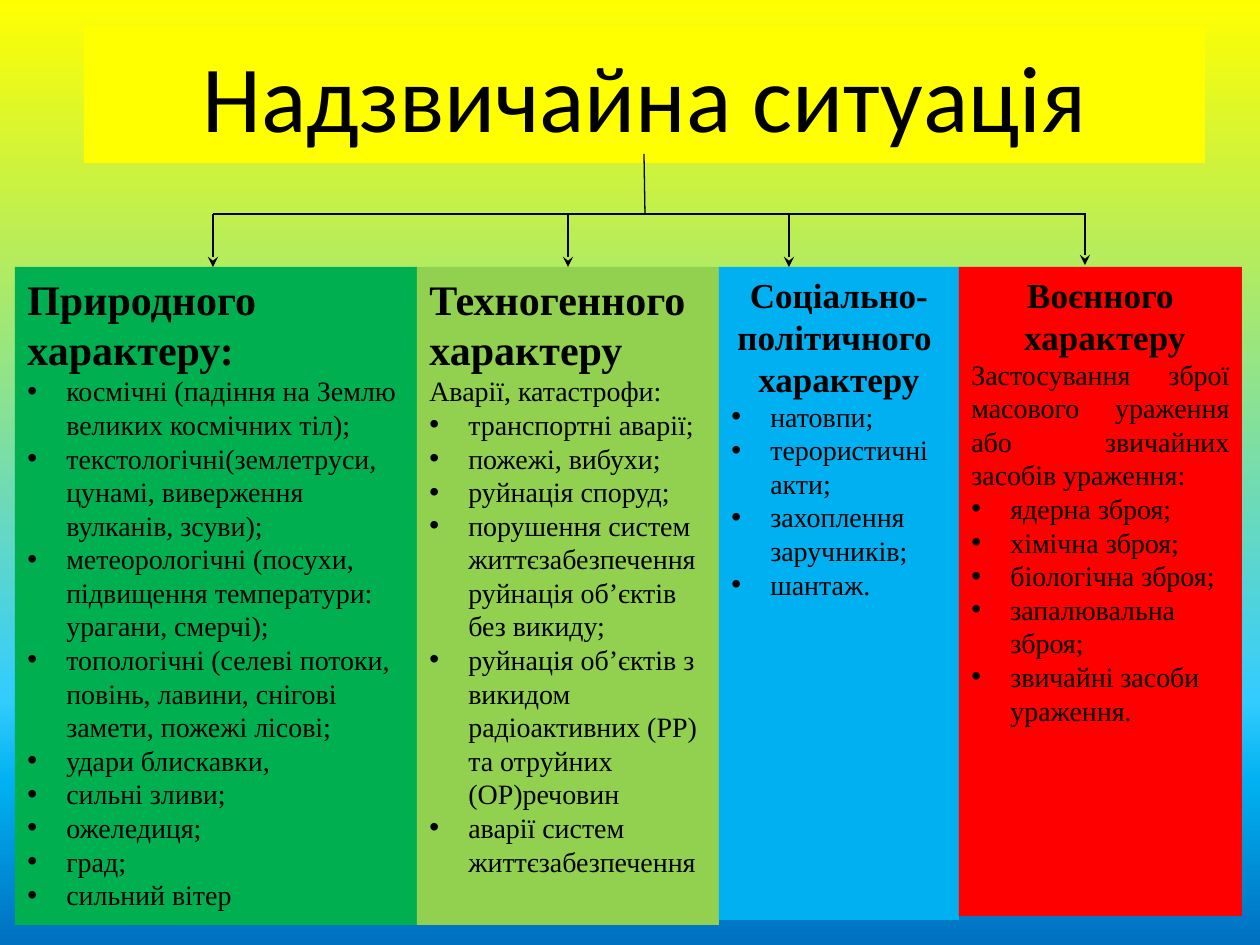
from lxml import etree
from pptx import Presentation, util as u
from pptx.dml.color import RGBColor
from pptx.enum import shapes, text
from pptx.oxml.ns import qn

PX = 914400 / 126
BLACK = "000000"
INDENT = 39
LEFT, CENTER, JUSTIFY = text.PP_ALIGN.LEFT, text.PP_ALIGN.CENTER, text.PP_ALIGN.JUSTIFY


def px(value):
    return u.Emu(round(value * PX))


def write(frame, content, size=16, bold=False, align=LEFT, bullet=False, font="Times New Roman"):
    """Fill the empty first paragraph of the frame, or add one after it."""
    paragraph = frame.paragraphs[0]
    if paragraph.runs:
        paragraph = frame.add_paragraph()
    paragraph.alignment = align
    if bullet:
        properties = paragraph._p.get_or_add_pPr()
        properties.set("marL", str(px(INDENT)))
        properties.set("indent", str(-px(INDENT)))
        etree.SubElement(properties, qn("a:buFont"), typeface="Arial")
        etree.SubElement(properties, qn("a:buChar"), char="•")
    run = paragraph.add_run()
    run.text = content
    run.font.name = font
    run.font.size = u.Pt(size)
    run.font.bold = bold
    run.font.color.rgb = RGBColor.from_string(BLACK)


presentation = Presentation()
presentation.slide_width, presentation.slide_height = px(1260), px(945)
slide = presentation.slides.add_slide(presentation.slide_layouts[6])

# Background gradient, running from top to bottom
background = slide.background.fill
background.gradient()
background.gradient_angle = 270
stops = next(slide._element.iter(qn("a:gsLst")))
for stop in list(stops):
    stops.remove(stop)
for percent, color in [(0, "FFFF00"), (74, "33CCFF"), (83, "00B0F0"), (100, "0070C0")]:
    stop = etree.SubElement(stops, qn("a:gs"), pos=str(percent * 1000))
    etree.SubElement(stop, qn("a:srgbClr"), val=color)

# Title and columns: left, top, width, height, fill, anchor, paragraphs
heading = {"size": 24, "bold": True}
small_heading = {"size": 20, "bold": True, "align": CENTER}
item = {"bullet": True}
TOP = 267
boxes = [
    (84, 26, 1121, 137, "FFFF00", text.MSO_ANCHOR.MIDDLE, [
        (["Надзвичайна ситуація"], {"size": 54, "align": CENTER, "font": "Calibri"}),
    ]),
    (15, TOP, 402, 658, "00B050", text.MSO_ANCHOR.TOP, [
        (["Природного", "характеру:"], heading),
        (["космічні (падіння на Землю великих космічних тіл);",
          "текстологічні(землетруси, цунамі, виверження вулканів, зсуви);",
          "метеорологічні (посухи, підвищення температури: урагани, смерчі);",
          "топологічні (селеві потоки, повінь, лавини, снігові замети, пожежі лісові;",
          "удари блискавки,", "сильні зливи;", "ожеледиця;", "град;", "сильний вітер"], item),
    ]),
    (417, TOP, 302, 658, "92D050", text.MSO_ANCHOR.TOP, [
        (["Техногенного", "характеру"], heading),
        (["Аварії, катастрофи:"], {}),
        (["транспортні аварії;", "пожежі, вибухи;", "руйнація споруд;",
          "порушення систем життєзабезпеченняруйнація обʼєктів без викиду;",
          "руйнація обʼєктів з викидом радіоактивних (РР) та отруйних (ОР)речовин",
          "аварії систем життєзабезпечення"], item),
    ]),
    (719, TOP, 240, 653, "00B0F0", text.MSO_ANCHOR.TOP, [
        (["Соціально-", "політичного ", "характеру"], small_heading),
        (["натовпи;", "терористичні акти;", "захоплення заручників;", "шантаж."], item),
    ]),
    (959, TOP, 283, 649, "FF0000", text.MSO_ANCHOR.TOP, [
        (["Воєнного", " характеру"], small_heading),
        (["Застосування зброї масового ураження або звичайних засобів ураження:"],
         {"align": JUSTIFY}),
        (["ядерна зброя;", "хімічна зброя;", "біологічна зброя;", "запалювальна зброя;",
          "звичайні засоби ураження."], item),
    ]),
]
for left, top, width, height, color, anchor, groups in boxes:
    shape = slide.shapes.add_shape(
        shapes.MSO_SHAPE.RECTANGLE, px(left), px(top), px(width), px(height))
    shape.shadow.inherit = False
    shape.fill.solid()
    shape.fill.fore_color.rgb = RGBColor.from_string(color)
    shape.line.fill.background()
    frame = shape.text_frame
    frame.word_wrap = True
    frame.vertical_anchor = anchor
    for lines, style in groups:
        for line in lines:
            write(frame, line, **style)

# Tree lines: start, end, arrowhead
BAR = 214
tree = [
    (213, BAR, 1086, BAR, False),
    (644, 154, 645, BAR, False),
    (213, BAR, 213, TOP, True),
    (568, BAR + 1, 568, TOP, True),
    (789, BAR, 789, TOP, True),
    (1085, BAR, 1085, TOP - 2, True),
]
for x1, y1, x2, y2, arrow in tree:
    connector = slide.shapes.add_connector(
        shapes.MSO_CONNECTOR.STRAIGHT, px(x1), px(y1), px(x2), px(y2))
    connector.line.color.rgb = RGBColor.from_string(BLACK)
    connector.line.width = u.Pt(0.75)
    if arrow:
        etree.SubElement(connector.line._get_or_add_ln(), qn("a:tailEnd"), type="stealth")
    etree.SubElement(connector._element.spPr, qn("a:effectLst"))

presentation.save("out.pptx")
